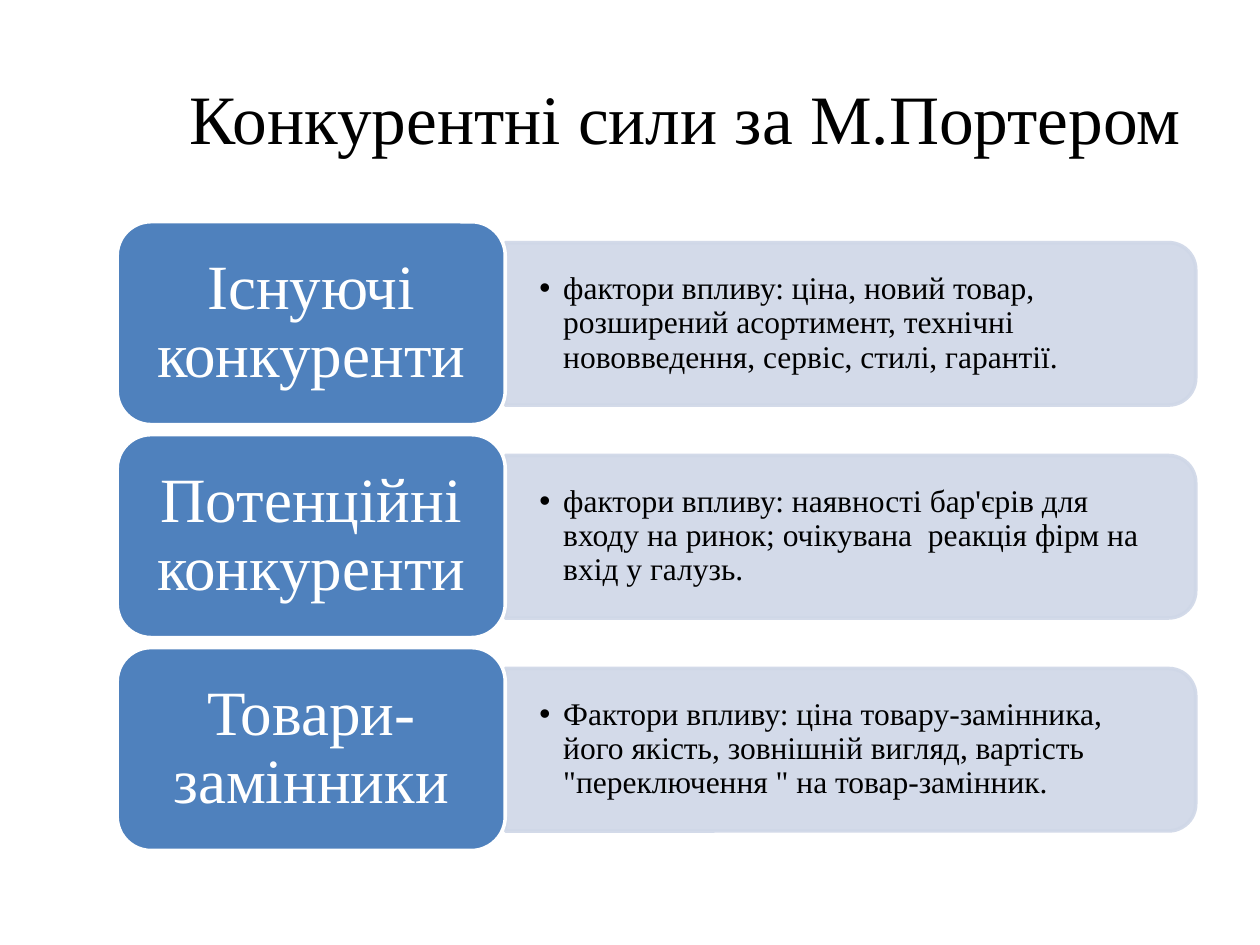
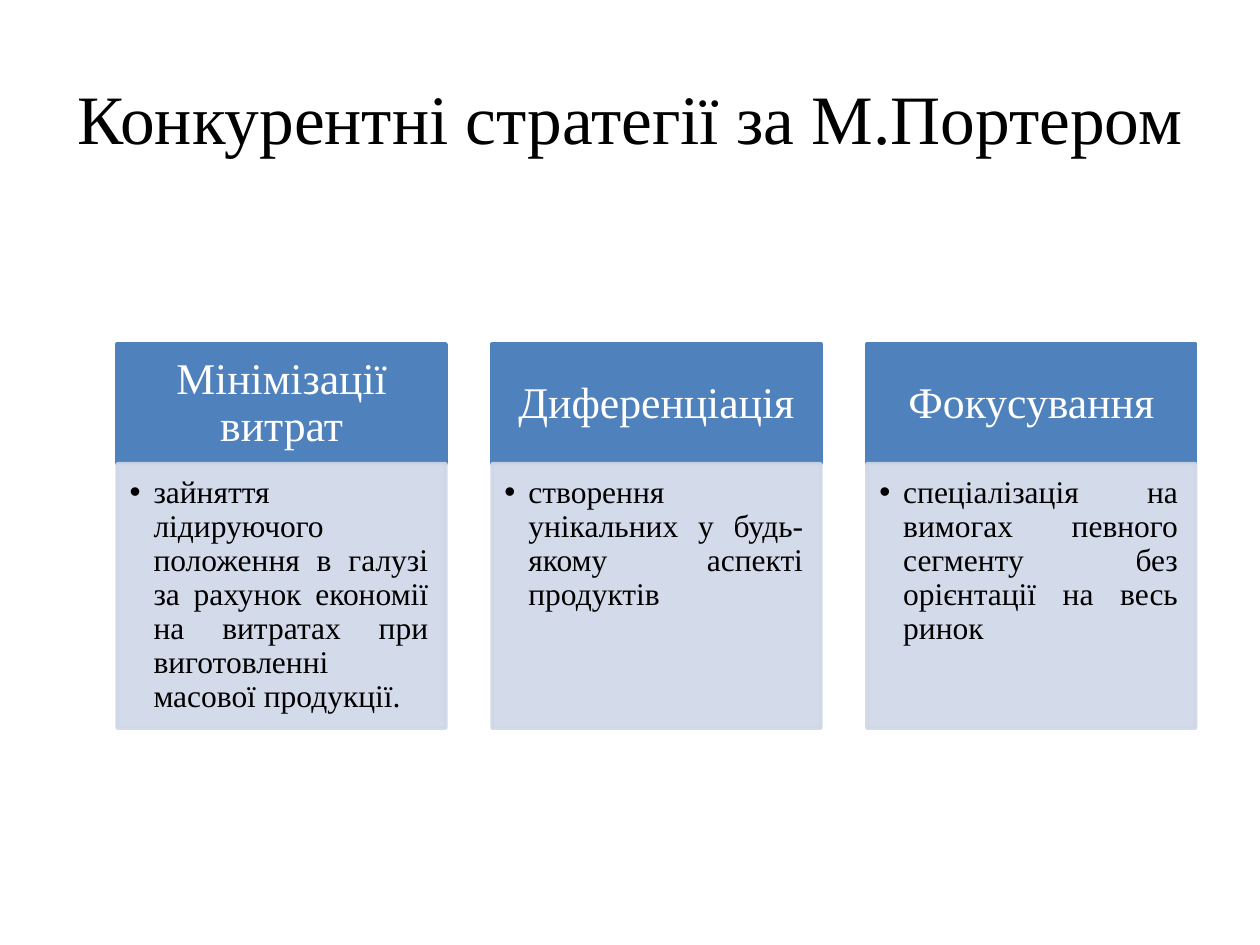
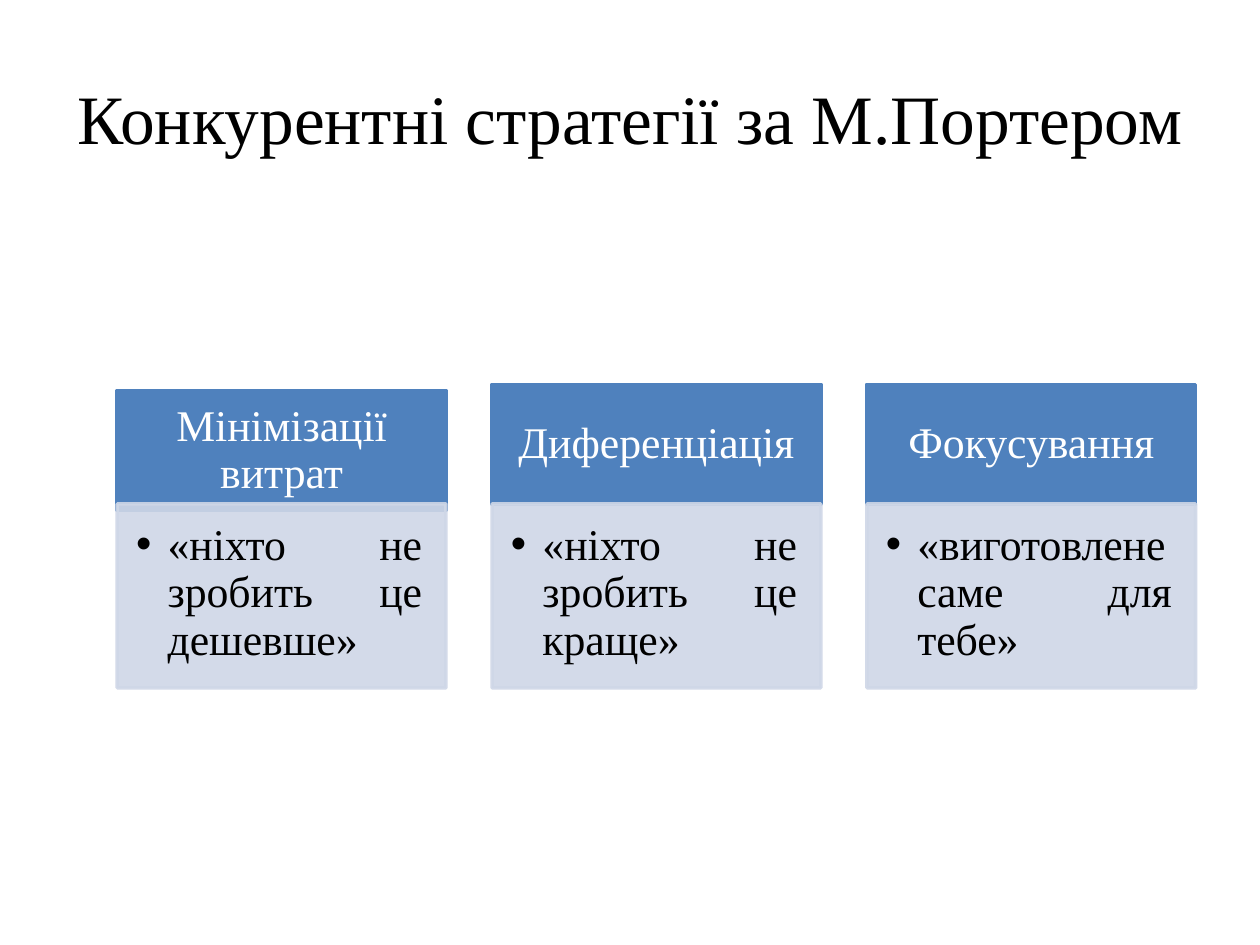
"""Build three slides on Porter's competitive forces and strategies."""
from dataclasses import dataclass

import lxml.etree
import pptx
import pptx.dml.color
import pptx.enum.shapes
import pptx.enum.text
import pptx.oxml.ns
import pptx.util

Inches = pptx.util.Inches
Pt = pptx.util.Pt
Align = pptx.enum.text.PP_ALIGN
Anchor = pptx.enum.text.MSO_ANCHOR
Preset = pptx.enum.shapes.MSO_SHAPE
qn = pptx.oxml.ns.qn


@dataclass(frozen=True)
class Theme:
    font: str = "Times New Roman"
    dark: str = "000000"
    light: str = "FFFFFF"
    accent: str = "4F81BD"
    pale: str = "CFD7E7"
    pale_opacity: int = 90
    line_width: float = 2
    line_spacing: float = 0.9
    title_size: float = 39.6
    force_size: float = 36
    heading_size: float = 25
    detail_size: float = 18


def rgb(color):
    return pptx.dml.color.RGBColor.from_string(color)


def set_opacity(shape, percent):
    for color in shape._element.spPr.iter(qn("a:srgbClr")):
        lxml.etree.SubElement(color, qn("a:alpha"), val=str(percent * 1000))


def add_bullet(paragraph, indent, color):
    paragraph.level = 1
    properties = paragraph._p.get_or_add_pPr()
    properties.set("marL", str(Inches(indent)))
    properties.set("indent", str(-Inches(indent)))
    bullet_color = lxml.etree.SubElement(properties, qn("a:buClr"))
    lxml.etree.SubElement(bullet_color, qn("a:srgbClr"), val=color)
    lxml.etree.SubElement(properties, qn("a:buFont"), typeface="Arial")
    lxml.etree.SubElement(properties, qn("a:buChar"), char="•")


def write_text(shape, text, *, font, size, color, align=Align.LEFT, anchor=Anchor.MIDDLE,
               insets=(0.1, 0.05, 0.1, 0.05), spacing=None, bullet_indent=None):
    frame = shape.text_frame
    frame.word_wrap = True
    frame.auto_size = pptx.enum.text.MSO_AUTO_SIZE.NONE
    frame.vertical_anchor = anchor
    (frame.margin_left, frame.margin_top,
     frame.margin_right, frame.margin_bottom) = map(Inches, insets)
    paragraph = frame.paragraphs[0]
    paragraph.alignment = align
    paragraph.space_before = Pt(0)
    if spacing:
        paragraph.line_spacing = spacing
    if bullet_indent:
        add_bullet(paragraph, bullet_indent, color)
    run = paragraph.add_run()
    run.text = text
    run.font.name = font
    run.font.size = Pt(size)
    run.font.color.rgb = rgb(color)


class Deck:
    def __init__(self, theme):
        self.theme = theme
        self.presentation = pptx.Presentation()
        self.presentation.slide_width = Inches(10)
        self.presentation.slide_height = Inches(7.5)
        self.slide = None

    def add_slide(self, title, left=0.5, width=9):
        self.slide = self.presentation.slides.add_slide(self.presentation.slide_layouts[5])
        shape = self.slide.shapes.title
        shape.left, shape.top = Inches(left), Inches(0.3)
        shape.width, shape.height = Inches(width), Inches(1.25)
        write_text(shape, title, font=self.theme.font, size=self.theme.title_size,
                   color=self.theme.dark, align=Align.CENTER)

    def add_block(self, preset, box, fill, line, adjustments=()):
        shape = self.slide.shapes.add_shape(preset, *map(Inches, box))
        shape.shadow.inherit = False
        shape.fill.solid()
        shape.fill.fore_color.rgb = rgb(fill)
        shape.line.color.rgb = rgb(line)
        shape.line.width = Pt(self.theme.line_width)
        for index, value in enumerate(adjustments):
            shape.adjustments[index] = value
        if fill == self.theme.pale:
            set_opacity(shape, self.theme.pale_opacity)
        return shape

    def add_label(self, shape, text, size, insets):
        write_text(shape, text, font=self.theme.font, size=size, color=self.theme.light,
                   align=Align.CENTER, insets=insets, spacing=self.theme.line_spacing)

    def add_detail(self, shape, text, size, insets, indent, **layout):
        write_text(shape, text, font=self.theme.font, size=size, color=self.theme.dark,
                   insets=insets, spacing=self.theme.line_spacing,
                   bullet_indent=indent, **layout)

    def add_force(self, top, name, factors):
        theme = self.theme
        length, thickness = 5.48, 1.29
        center_x, center_y = 6.75, top + 0.81
        panel_box = (center_x - thickness / 2, center_y - length / 2, thickness, length)
        panel = self.add_block(Preset.ROUND_2_SAME_RECTANGLE, panel_box,
                               theme.pale, theme.pale, (0.167, 0))
        panel.rotation = 90
        factors_box = self.slide.shapes.add_textbox(
            Inches(4.01), Inches(top + 0.23), Inches(5.41), Inches(1.16))
        self.add_detail(factors_box, factors, theme.detail_size,
                        (0.27, 0.14, 0.27, 0.14), 0.19)
        card = self.add_block(Preset.ROUNDED_RECTANGLE, (0.93, top, 3.08, 1.61),
                              theme.accent, theme.light, (0.167,))
        self.add_label(card, name, theme.force_size, (0.15, 0.07, 0.15, 0.07))

    def add_strategy(self, left, heading_top, body_top, body_height, name, detail,
                     size, insets, indent):
        theme = self.theme
        width = 2.61
        heading = self.add_block(Preset.RECTANGLE, (left, heading_top, width, 0.95),
                                 theme.accent, theme.accent)
        self.add_label(heading, name, theme.heading_size, (0.19, 0.11, 0.19, 0.11))
        body = self.add_block(Preset.RECTANGLE, (left, body_top, width, body_height),
                              theme.pale, theme.pale)
        self.add_detail(body, detail, size, insets, indent,
                        align=Align.JUSTIFY, anchor=Anchor.TOP)

    def add_strategies(self, details, heading_tops, body_top, body_height, **body_format):
        first_left, last_left = 0.93, 6.88
        step = (last_left - first_left) / (len(STRATEGIES) - 1)
        for index, (name, detail, top) in enumerate(zip(STRATEGIES, details, heading_tops)):
            self.add_strategy(first_left + index * step, top, body_top, body_height,
                              name, detail, **body_format)


FORCES = [
    ("Існуючі конкуренти",
     "фактори впливу: ціна, новий товар, розширений асортимент, технічні "
     "нововведення, сервіс, стилі, гарантії."),
    ("Потенційні конкуренти",
     "фактори впливу: наявності бар'єрів для входу на ринок; очікувана  реакція "
     "фірм на вхід у галузь."),
    ("Товари-замінники",
     "Фактори впливу: ціна товару-замінника, його якість, зовнішній вигляд, "
     "вартість \"переключення \" на товар-замінник."),
]
STRATEGIES = ["Мінімізації витрат", "Диференціація", "Фокусування"]
STRATEGY_TITLE = "Конкурентні стратегії за М.Портером"
MEANINGS = [
    "зайняття лідируючого положення в галузі за рахунок економії на витратах "
    "при виготовленні масової продукції.",
    "створення унікальних у будь-якому аспекті продуктів",
    "спеціалізація на вимогах певного сегменту без орієнтації на весь ринок",
]
MOTTOS = [
    "«ніхто не зробить це дешевше»",
    "«ніхто не зробить це краще»",
    "«виготовлене саме для тебе»",
]


def main():
    theme = Theme()
    deck = Deck(theme)

    deck.add_slide("Конкурентні сили за М.Портером", left=1.38, width=8.12)
    for index, (name, factors) in enumerate(FORCES):
        deck.add_force(1.76 + index * 1.69, name, factors)

    deck.add_slide(STRATEGY_TITLE)
    deck.add_strategies(MEANINGS, (2.73, 2.73, 2.73), 3.68, 2.1, size=theme.detail_size,
                        insets=(0.1, 0.1, 0.14, 0.16), indent=0.19)

    deck.add_slide(STRATEGY_TITLE)
    deck.add_strategies(MOTTOS, (3.1, 3.05, 3.05), 4, 1.46, size=theme.heading_size,
                        insets=(0.15, 0.15, 0.19, 0.22), indent=0.25)

    deck.presentation.save("out.pptx")


if __name__ == "__main__":
    main()
